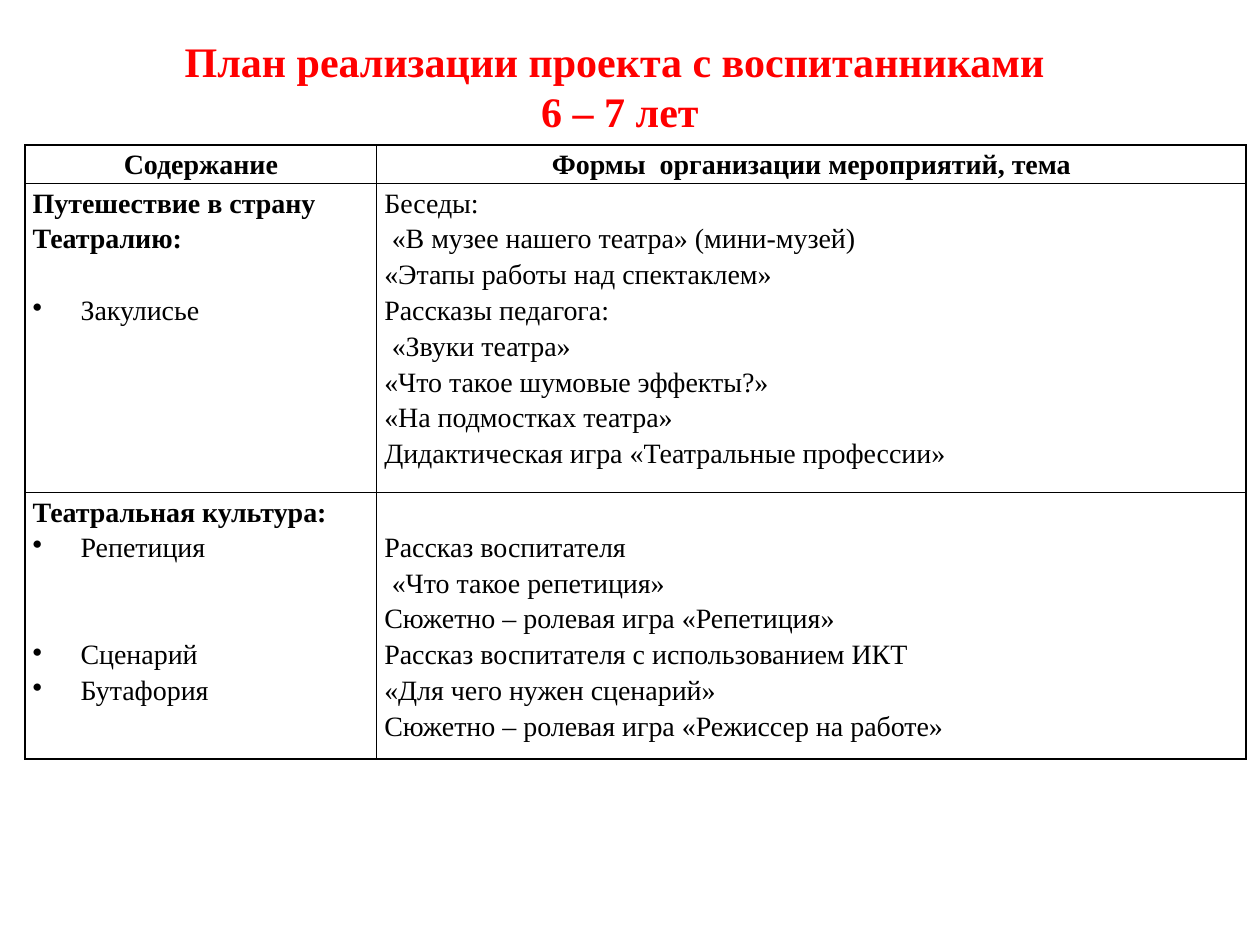
from dataclasses import dataclass

import pptx
import pptx.dml.color
import pptx.enum.text
import pptx.oxml
import pptx.oxml.ns
import pptx.util

Inches = pptx.util.Inches
Pt = pptx.util.Pt
ALIGN = pptx.enum.text.PP_ALIGN
ANCHOR = pptx.enum.text.MSO_ANCHOR
RED = pptx.dml.color.RGBColor(0xFF, 0x00, 0x00)
BLACK = pptx.dml.color.RGBColor(0x00, 0x00, 0x00)
FONT_NAME = "Times New Roman"
LINE_PITCH = 20.4
LINE_INCHES = 0.28
BULLET_INDENT = 0.38
QUOTE_INDENT = 0.06
COLUMN_WIDTHS = (2.79, 6.9)
ROW_HEIGHTS = (0.29, 2.32, 2.03)
CELL_FORMAT = {
    "margin_left": Inches(0.06),
    "margin_right": Inches(0.06),
    "margin_top": Inches(0),
    "margin_bottom": Inches(0),
}


@dataclass(frozen=True)
class Line:
    text: str
    bold: bool = False
    bullet: bool = False
    centered: bool = False
    indent: float = 0
    gap_lines: int = 0


@dataclass(frozen=True)
class Entry:
    lines: tuple[Line, ...]
    top_lines: int = 0


PLAN = (
    (
        Entry((Line("Содержание", bold=True, centered=True),)),
        Entry((Line("Формы  организации мероприятий, тема", bold=True, centered=True),)),
    ),
    (
        Entry((
            Line("Путешествие в страну Театралию:", bold=True),
            Line("Закулисье", bullet=True, gap_lines=1),
        )),
        Entry((
            Line("Беседы:"),
            Line("«В музее нашего театра» (мини-музей)", indent=QUOTE_INDENT),
            Line("«Этапы работы над спектаклем»"),
            Line("Рассказы педагога:"),
            Line("«Звуки театра»", indent=QUOTE_INDENT),
            Line("«Что такое шумовые эффекты?»"),
            Line("«На подмостках театра»"),
            Line("Дидактическая игра «Театральные профессии»"),
        )),
    ),
    (
        Entry((
            Line("Театральная культура:", bold=True),
            Line("Репетиция", bullet=True),
            Line("Сценарий", bullet=True, gap_lines=2),
            Line("Бутафория", bullet=True),
        )),
        Entry((
            Line("Рассказ воспитателя"),
            Line("«Что такое репетиция»", indent=QUOTE_INDENT),
            Line("Сюжетно – ролевая игра «Репетиция»"),
            Line("Рассказ воспитателя с использованием ИКТ"),
            Line("«Для чего нужен сценарий»"),
            Line("Сюжетно – ролевая игра «Режиссер на работе»"),
        ), top_lines=1),
    ),
)


def apply_format(target, values: dict) -> None:
    for name, value in values.items():
        setattr(target, name, value)


def style_font(font, size: float, color, bold: bool) -> None:
    apply_format(font, {"name": FONT_NAME, "size": Pt(size), "bold": bold})
    font.color.rgb = color


def write_line(paragraph, line: Line) -> None:
    paragraph.text = line.text
    paragraph.line_spacing = 1.15
    paragraph.alignment = ALIGN.CENTER if line.centered else ALIGN.LEFT
    if line.gap_lines:
        paragraph.space_before = Pt(LINE_PITCH * line.gap_lines)
    properties = paragraph._p.get_or_add_pPr()
    if line.bullet:
        properties.set("marL", str(Inches(BULLET_INDENT)))
        properties.set("indent", str(-Inches(BULLET_INDENT)))
        bullet = pptx.oxml.parse_xml(
            f'<a:buChar {pptx.oxml.ns.nsdecls("a")} char="•"/>'
        )
        properties.append(bullet)
    elif line.indent:
        properties.set("marL", str(Inches(line.indent)))
        properties.set("indent", "0")
    style_font(paragraph.runs[0].font, 16, BLACK, line.bold)


def add_borders(cell) -> None:
    properties = cell._tc.get_or_add_tcPr()
    for side in ("lnL", "lnR", "lnT", "lnB"):
        properties.append(pptx.oxml.parse_xml(
            f'<a:{side} {pptx.oxml.ns.nsdecls("a")} w="{Pt(1)}">'
            f'<a:solidFill><a:srgbClr val="{BLACK}"/></a:solidFill></a:{side}>'
        ))


def fill_cell(cell, entry: Entry) -> None:
    apply_format(cell, CELL_FORMAT)
    cell.margin_top = Inches(LINE_INCHES * entry.top_lines)
    add_borders(cell)
    cell.fill.background()
    frame = cell.text_frame
    for index, line in enumerate(entry.lines):
        write_line(frame.add_paragraph() if index else frame.paragraphs[0], line)


def add_heading(slide) -> None:
    heading = slide.shapes.add_textbox(Inches(0.67), Inches(0.13), Inches(8.5), Inches(1.1))
    frame = heading.text_frame
    apply_format(frame, {"word_wrap": True, "vertical_anchor": ANCHOR.MIDDLE})
    paragraph = frame.paragraphs[0]
    paragraph.text = "План реализации проекта с воспитанниками \v6 – 7 лет"
    paragraph.alignment = ALIGN.CENTER
    for run in paragraph.runs:
        style_font(run.font, 24, RED, True)


def add_plan(slide) -> None:
    plan = slide.shapes.add_table(
        len(ROW_HEIGHTS), len(COLUMN_WIDTHS), Inches(0.2), Inches(1.15),
        Inches(sum(COLUMN_WIDTHS)), Inches(sum(ROW_HEIGHTS)),
    ).table
    apply_format(plan, {"first_row": False, "horz_banding": False})
    for column, width in zip(plan.columns, COLUMN_WIDTHS):
        column.width = Inches(width)
    for row, height, entries in zip(plan.rows, ROW_HEIGHTS, PLAN):
        row.height = Inches(height)
        for cell, entry in zip(row.cells, entries):
            fill_cell(cell, entry)


def main() -> None:
    presentation = pptx.Presentation()
    apply_format(presentation, {"slide_width": Inches(10), "slide_height": Inches(7.5)})
    slide = presentation.slides.add_slide(presentation.slide_layouts[6])
    add_heading(slide)
    add_plan(slide)
    presentation.save("out.pptx")


if __name__ == "__main__":
    main()
